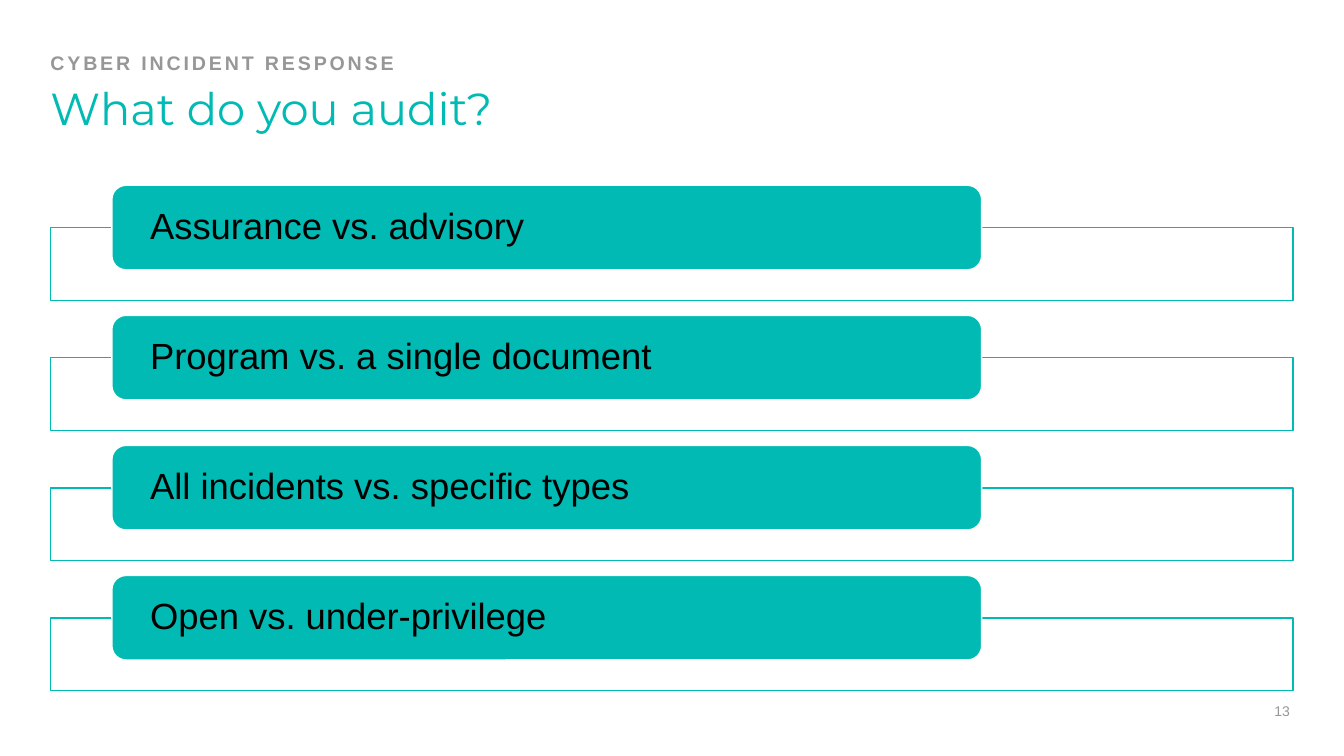
"""Build the "What do you audit?" slide of a cyber incident response deck."""
from dataclasses import dataclass

from lxml.etree import SubElement
from pptx import Presentation
from pptx.dml.color import RGBColor
from pptx.enum.shapes import MSO_SHAPE as Preset
from pptx.enum.text import MSO_ANCHOR as Anchor, PP_ALIGN as Align
from pptx.oxml.ns import qn
from pptx.shapes.autoshape import Shape
from pptx.slide import Slide
from pptx.util import Cm, Pt

TEAL = RGBColor(0x00, 0xBA, 0xB3)
GRAY = RGBColor(0x97, 0x97, 0x97)
WHITE = RGBColor(0xFF, 0xFF, 0xFF)
BLACK = RGBColor(0x00, 0x00, 0x00)

QUESTIONS = (
    "Assurance vs. advisory",
    "Program vs. a single document",
    "All incidents vs. specific types",
    "Open vs. under-privilege",
)
FIRST_TOP = 4.67
ROW_PITCH = 3.277
FRAME_DROP = 1.07


@dataclass(frozen=True)
class Box:
    """Position and size in centimetres."""
    left: float
    top: float
    width: float
    height: float

    def lengths(self) -> tuple[Cm, Cm, Cm, Cm]:
        """Return the four lengths in the order python-pptx expects."""
        return Cm(self.left), Cm(self.top), Cm(self.width), Cm(self.height)


@dataclass(frozen=True)
class Label:
    """Text with its typography and placement inside a shape."""
    text: str
    size: int
    color: RGBColor
    font: str = "Arial"
    bold: bool = False
    tracking: int = 0
    anchor: Anchor = Anchor.MIDDLE
    align: Align = Align.LEFT
    line_spacing: float = 0.9
    side_inset: float = 0
    top_inset: float = 0


def write_label(shape: Shape, label: Label) -> None:
    """Write one formatted paragraph into a shape."""
    frame = shape.text_frame
    frame_format = {
        "word_wrap": True,
        "vertical_anchor": label.anchor,
        "margin_left": Cm(label.side_inset),
        "margin_right": Cm(label.side_inset),
        "margin_top": Cm(label.top_inset),
        "margin_bottom": 0,
    }
    for name, value in frame_format.items():
        setattr(frame, name, value)
    paragraph = frame.paragraphs[0]
    paragraph.alignment = label.align
    paragraph.line_spacing = label.line_spacing
    run = paragraph.add_run()
    run.text = label.text
    font_format = {"name": label.font, "size": Pt(label.size), "bold": label.bold}
    for name, value in font_format.items():
        setattr(run.font, name, value)
    run.font.color.rgb = label.color
    if label.tracking:
        run.font._element.set("spc", str(label.tracking * 100))


def add_label(slide: Slide, box: Box, label: Label) -> None:
    """Add a text box holding one label."""
    write_label(slide.shapes.add_textbox(*box.lengths()), label)


def add_panel(slide: Slide, preset: Preset, box: Box, fill: RGBColor, line: RGBColor) -> Shape:
    """Add a filled, outlined shape without a shadow."""
    shape = slide.shapes.add_shape(preset, *box.lengths())
    shape.shadow.inherit = False
    shape.fill.solid()
    shape.fill.fore_color.rgb = fill
    shape.line.color.rgb = line
    shape.line.width = Pt(1)
    return shape


def add_question(slide: Slide, top: float, text: str) -> None:
    """Add an outlined frame with a question bar across its top edge."""
    frame_box = Box(1.27, top + FRAME_DROP, 31.32, 1.83)
    frame = add_panel(slide, Preset.RECTANGLE, frame_box, WHITE, TEAL)
    color = frame._element.spPr.find(qn("a:solidFill"))[0]
    SubElement(color, qn("a:alpha"), val="90000")
    bar_box = Box(2.82, top, 21.92, 2.13)
    bar = add_panel(slide, Preset.ROUNDED_RECTANGLE, bar_box, TEAL, WHITE)
    write_label(bar, Label(text, 26, BLACK, side_inset=0.86))


def main() -> None:
    """Create the presentation and save it."""
    presentation = Presentation()
    presentation.slide_width = Cm(33.87)
    presentation.slide_height = Cm(19.05)
    slide = presentation.slides.add_slide(presentation.slide_layouts[6])
    add_label(slide, Box(31.8, 17.7, 1.02, 0.43),
              Label("13", 10, GRAY, align=Align.CENTER, line_spacing=1.0))
    add_label(slide, Box(1.27, 1.93, 31.32, 1.5),
              Label("What do you audit?", 32, TEAL, "Montserrat",
                    anchor=Anchor.TOP, top_inset=0.25))
    add_label(slide, Box(1.27, 1.35, 31.32, 0.53),
              Label("CYBER INCIDENT RESPONSE", 14, GRAY, bold=True,
                    tracking=2, anchor=Anchor.BOTTOM))
    for row, text in enumerate(QUESTIONS):
        add_question(slide, FIRST_TOP + row * ROW_PITCH, text)
    presentation.save("out.pptx")


if __name__ == "__main__":
    main()
